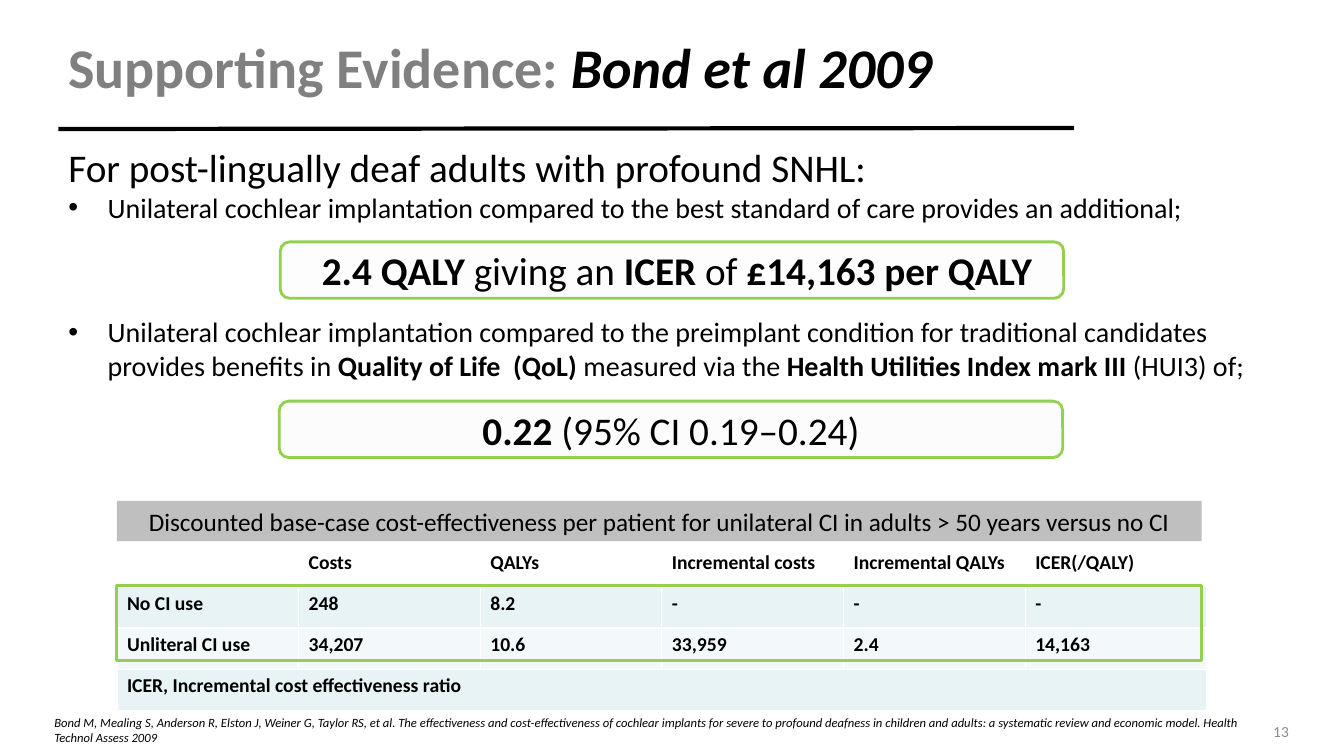
from lxml.etree import SubElement
from pptx import Presentation
from pptx.dml.color import RGBColor
from pptx.enum.shapes import MSO_CONNECTOR, MSO_SHAPE
from pptx.enum.text import MSO_ANCHOR as Anchor, PP_ALIGN as Align
from pptx.oxml import parse_xml
from pptx.oxml.ns import nsdecls, qn
from pptx.util import Inches, Pt

COLORS = {
    "black": "000000", "title": "808080", "number": "8C8C8C", "bar": "BFBFBF",
    "green": "92D050", "callout": "F2F2F2", "white": "FFFFFF",
    "band": "E7F3F4", "light band": "F3F9FA",
}


def color(name):
    return RGBColor.from_string(COLORS[name])


def write(para, size, *runs):
    """Add runs given as (text, bold, italic, color name), the last three optional."""
    for text, *style in runs:
        bold, italic, ink = style + [False, False, "black"][len(style):]
        span = para.add_run()
        span.text = text
        span.font.name = "Calibri"
        span.font.size = Pt(size)
        span.font.bold = bold
        span.font.italic = italic
        span.font.color.rgb = color(ink)


deck = Presentation()
deck.slide_width, deck.slide_height = Inches(13.33), Inches(7.5)
page = deck.slides.add_slide(deck.slide_layouts[6])

rule = page.shapes.add_connector(
    MSO_CONNECTOR.STRAIGHT, Inches(0.58), Inches(1.28), Inches(10.65), Inches(1.27))
rule.line.color.rgb = color("black")
rule.line.width = Pt(3)
SubElement(rule._element.spPr, qn("a:effectLst"))

# Body text
body = page.shapes.add_textbox(Inches(0.58), Inches(1.37), Inches(12.33), Inches(5.59)).text_frame
body.word_wrap = True
write(body.paragraphs[0], 28, ("For post-lingually deaf adults with profound SNHL:",))
bullets = [
    (0, [("Unilateral cochlear implantation compared to the best standard of care "
          "provides an additional;",)]),
    (65, [("Unilateral cochlear implantation compared to the preimplant condition for "
           "traditional candidates provides benefits in ",),
          ("Quality of Life  (QoL)", True),
          (" measured via the ",),
          ("Health Utilities Index mark III ", True),
          ("(HUI3) of;",)]),
]
for gap, runs in bullets:
    para = body.add_paragraph()
    props = para._p.get_or_add_pPr()
    props.set("marL", str(Inches(0.39)))
    props.set("indent", str(Inches(-0.39)))
    para.space_before = Pt(gap)
    SubElement(props, qn("a:buFont"), typeface="Arial")
    SubElement(props, qn("a:buChar"), char="•")
    write(para, 20, *runs)

# Results table
rows = [
    ["", "Costs", "QALYs", "Incremental costs", "Incremental QALYs", "ICER(/QALY)"],
    ["No CI use", "248", "8.2", "-", "-", "-"],
    ["Unliteral CI use", "34,207", "10.6", "33,959", "2.4", "14,163"],
    ["ICER, Incremental cost effectiveness ratio", "", "", "", "", ""],
]
row_fills = [None, "band", "light band", "band"]
table = page.shapes.add_table(
    4, 6, Inches(1.16), Inches(5.41), Inches(10.81), Inches(1.64)).table
for row in table.rows:
    row.height = Inches(0.41)
table.cell(3, 0).merge(table.cell(3, 5))
for r, (texts, fill) in enumerate(zip(rows, row_fills)):
    for c, text in enumerate(texts):
        cell = table.cell(r, c)
        for side in "LRTB":
            heavy = (r, side) in [(0, "B"), (1, "T")]
            cell._tc.get_or_add_tcPr().append(parse_xml(
                f'<a:ln{side} {nsdecls("a")} w="{Pt(3 if heavy else 1)}"><a:solidFill>'
                f'<a:srgbClr val="{COLORS["white"]}"/></a:solidFill></a:ln{side}>'))
        if fill:
            cell.fill.solid()
            cell.fill.fore_color.rgb = color(fill)
        else:
            cell.fill.background()
        if text:
            write(cell.text_frame.paragraphs[0], 14, (text, True))
        else:
            cell.text_frame.paragraphs[0].font.size = Pt(14)

# Title, slide number and citation
citation = (
    "Bond M, Mealing S, Anderson R, Elston J, Weiner G, Taylor RS, et al. The effectiveness "
    "and cost-effectiveness of cochlear implants for severe to profound deafness in children "
    "and adults: a systematic review and economic model. Health Technol Assess 2009")
labels = [
    (0.58, 0.14, 10.89, 1.04, Anchor.MIDDLE, 40,
     [("Supporting Evidence: ", True, False, "title"), ("Bond et al 2009", True, True)]),
    (12.53, 7.11, 0.64, 0.29, Anchor.TOP, 11, [("13", False, False, "number")]),
    (0.44, 7.04, 12.18, 0.4, Anchor.TOP, 9, [(citation, False, True)]),
]
for left, top, width, height, anchor, size, runs in labels:
    box = page.shapes.add_textbox(Inches(left), Inches(top), Inches(width), Inches(height))
    box.text_frame.word_wrap = True
    box.text_frame.vertical_anchor = anchor
    write(box.text_frame.paragraphs[0], size, *runs)

# Table heading, highlight frame and callouts: fill, opacity in percent, outline
heading = ("Discounted base-case cost-effectiveness per patient for unilateral CI in adults "
           "> 50 years versus no CI")
panels = [
    (MSO_SHAPE.RECTANGLE, 1.16, 4.97, 10.76, 0.4, "bar", 100, None, 18, [(heading,)]),
    (MSO_SHAPE.RECTANGLE, 1.16, 5.81, 10.76, 0.74, None, 100, "green", 18, []),
    (MSO_SHAPE.ROUNDED_RECTANGLE, 2.78, 2.4, 7.77, 0.56, "callout", 8, "green", 28,
     [("2.4 QALY ", True), ("giving an ",), ("ICER ", True), ("of ",),
      ("£14,163 per QALY", True)]),
    (MSO_SHAPE.ROUNDED_RECTANGLE, 2.77, 3.98, 7.77, 0.56, "callout", 19, "green", 28,
     [("0.22 ", True), ("(95% CI 0.19–0.24)",)]),
]
for kind, left, top, width, height, fill, opacity, outline, size, runs in panels:
    panel = page.shapes.add_shape(
        kind, Inches(left), Inches(top), Inches(width), Inches(height))
    panel.shadow.inherit = False
    if fill:
        panel.fill.solid()
        panel.fill.fore_color.rgb = color(fill)
        if opacity < 100:
            tint = panel._element.spPr.find(qn("a:solidFill")).find(qn("a:srgbClr"))
            SubElement(tint, qn("a:alpha"), val=str(opacity * 1000))
    else:
        panel.fill.background()
    if outline:
        panel.line.color.rgb = color(outline)
        panel.line.width = Pt(2)
    else:
        panel.line.fill.background()
    panel.text_frame.word_wrap = True
    panel.text_frame.vertical_anchor = Anchor.MIDDLE
    para = panel.text_frame.paragraphs[0]
    para.alignment = Align.CENTER
    if len(runs) > 2:
        para._p.get_or_add_pPr().set("marL", str(Inches(0.39)))
        para._p.get_or_add_pPr().set("indent", str(Inches(-0.29)))
    write(para, size, *runs)

deck.save("out.pptx")
